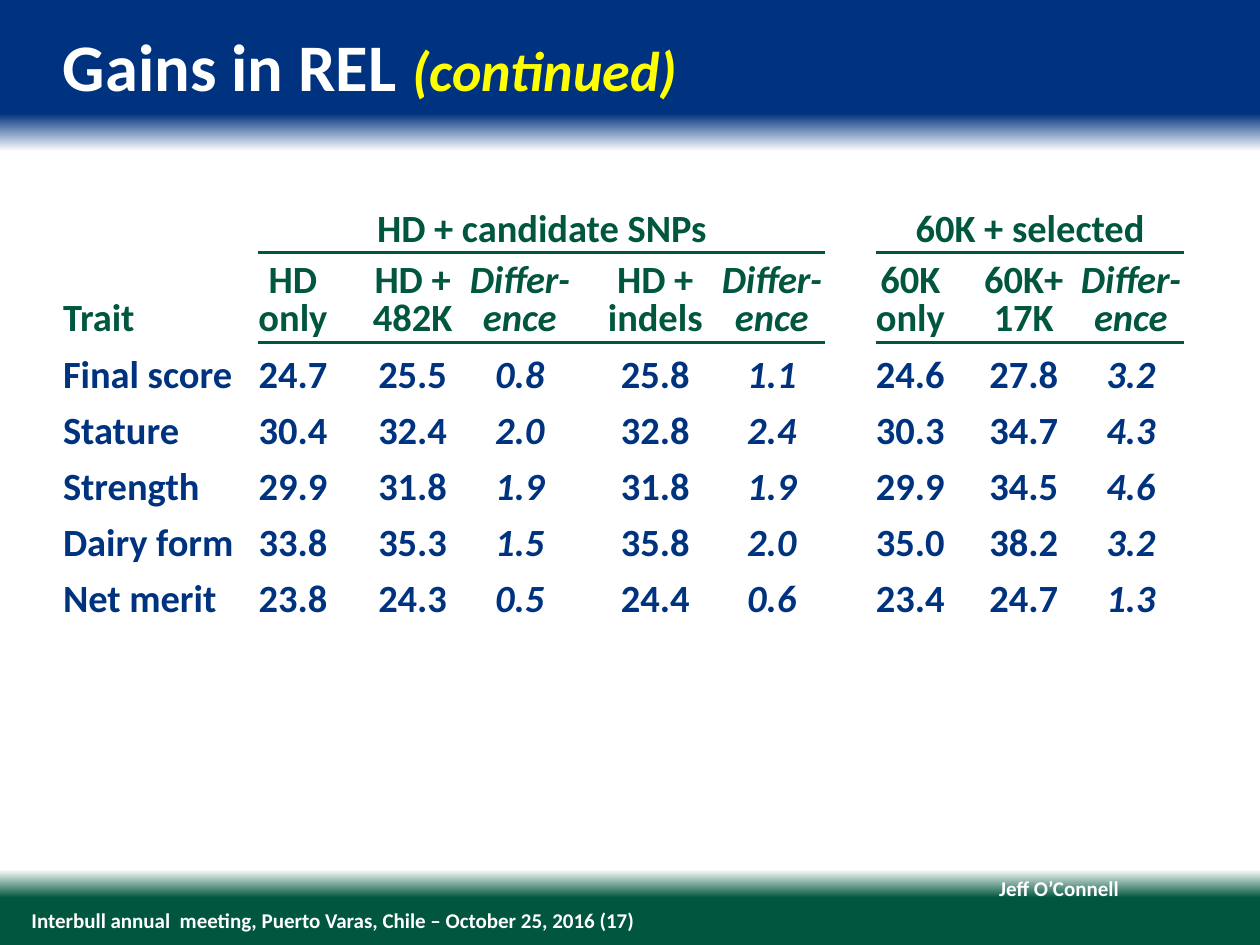
import pptx
import pptx.util
from pptx.dml.color import RGBColor
from pptx.enum.text import MSO_ANCHOR, MSO_AUTO_SIZE, PP_ALIGN
from pptx.oxml import parse_xml
from pptx.oxml.ns import nsdecls, qn
from pptx.util import Inches, Pt

NAVY = RGBColor(0x00, 0x33, 0x7F)
GREEN = RGBColor(0x00, 0x56, 0x3F)
WHITE = RGBColor(0xFF, 0xFF, 0xFF)
YELLOW = RGBColor(0xFF, 0xFF, 0x00)

BACKGROUND_STOPS = [(0, NAVY), (12, NAVY), (16, WHITE), (92, WHITE), (95, GREEN), (100, GREEN)]
NO_STYLE = "{2D5ABB26-0587-4C30-8999-92F81FD0307C}"

COL_WIDTHS = [1.55, 0.55, 0.35, 0.65, 0.1, 0.85, 0.25, 0.8, 0.1, 0.85,
              0.4, 0.55, 0.3, 0.65, 0.1, 0.85]
VALUE_COLS = [1, 3, 5, 7, 9, 11, 13, 15]
DIFFERENCE_COLS = {5, 9, 15}
GROUPS = [("HD + candidate SNPs", 1, 9), ("60K + selected", 11, 15)]
HEADINGS = ["HD only", "HD + 482K", "Differ-ence", "HD + indels", "Differ-ence",
            "60K only", "60K+\n17K", "Differ-ence"]
TRAITS = [
    ("Final score", "24.7", "25.5", "0.8", "25.8", "1.1", "24.6", "27.8", "3.2"),
    ("Stature", "30.4", "32.4", "2.0", "32.8", "2.4", "30.3", "34.7", "4.3"),
    ("Strength", "29.9", "31.8", "1.9", "31.8", "1.9", "29.9", "34.5", "4.6"),
    ("Dairy form", "33.8", "35.3", "1.5", "35.8", "2.0", "35.0", "38.2", "3.2"),
    ("Net merit", "23.8", "24.3", "0.5", "24.4", "0.6", "23.4", "24.7", "1.3"),
]


def set_attrs(obj, **values):
    for name, value in values.items():
        setattr(obj, name, value)


def paint_background(s):
    s.background.fill.gradient()
    grad = s.element.find(".//" + qn("a:gradFill"))
    for child in list(grad):
        grad.remove(child)
    stops = "".join(
        f'<a:gs pos="{pos * 1000}"><a:srgbClr val="{color}"/></a:gs>'
        for pos, color in BACKGROUND_STOPS)
    grad.append(parse_xml(f'<a:gsLst {nsdecls("a")}>{stops}</a:gsLst>'))
    grad.append(parse_xml(f'<a:lin {nsdecls("a")} ang="5400000" scaled="0"/>'))


def add_text(s, box, runs, anchor=MSO_ANCHOR.MIDDLE, align=PP_ALIGN.LEFT, wrap=True):
    """Add one line of text; runs holds (text, font values) pairs."""
    tf = s.shapes.add_textbox(*map(Inches, box)).text_frame
    set_attrs(tf, margin_left=0, margin_top=0, margin_right=0, margin_bottom=0,
              word_wrap=wrap, vertical_anchor=anchor, auto_size=MSO_AUTO_SIZE.SHAPE_TO_FIT_TEXT)
    p = tf.paragraphs[0]
    p.alignment = align
    for text, (size, color, italic) in runs:
        r = p.add_run()
        r.text = text
        set_attrs(r.font, name="Calibri", size=Pt(size), bold=True, italic=italic)
        r.font.color.rgb = color


def add_title(s, box):
    add_text(s, box, [("Gains in REL ", (38, WHITE, False)),
                      ("(continued)", (32, YELLOW, True))], anchor=MSO_ANCHOR.TOP)


def add_footer(s, author_box, meeting_box):
    style = (12, WHITE, False)
    add_text(s, author_box, [("Jeff O’Connell", style)], align=PP_ALIGN.RIGHT, wrap=False)
    add_text(s, meeting_box, [
        ("Interbull annual  meeting, Puerto Varas, Chile – October 25, 2016 (17)", style)])


def fill_cell(cell, text, color, spacing=32, italic=False, align=PP_ALIGN.CENTER):
    cell.text_frame.text = text
    for p in cell.text_frame.paragraphs:
        set_attrs(p, alignment=align, line_spacing=Pt(spacing))
        for r in p.runs:
            set_attrs(r.font, name="Calibri", size=Pt(22), bold=True, italic=italic)
            r.font.color.rgb = color


def add_rule(cell, side):
    cell._tc.get_or_add_tcPr().insert(0, parse_xml(
        f'<a:{side} {nsdecls("a")} w="{Pt(2.25)}"><a:solidFill>'
        f'<a:srgbClr val="{GREEN}"/></a:solidFill></a:{side}>'))


def add_gains_table(s, box):
    n_rows = len(TRAITS) + 2
    table = s.shapes.add_table(n_rows, len(COL_WIDTHS), *map(Inches, box)).table
    set_attrs(table, first_row=False, horz_banding=False)
    table._tbl.tblPr.find(qn("a:tableStyleId")).text = NO_STYLE
    for col, width in zip(table.columns, COL_WIDTHS):
        col.width = Inches(width)
    for i, row in enumerate(table.rows):
        row.height = Inches(0.71) if i == 1 else Pt(32)
    for cell in table.iter_cells():
        set_attrs(cell, margin_left=0, margin_top=0, margin_right=0, margin_bottom=0,
                  vertical_anchor=MSO_ANCHOR.MIDDLE)
        cell.fill.background()

    trait = table.cell(0, 0)
    trait.merge(table.cell(1, 0))
    trait.vertical_anchor = MSO_ANCHOR.BOTTOM
    fill_cell(trait, "Trait", GREEN, spacing=22, align=PP_ALIGN.LEFT)
    for text, first, last in GROUPS:
        group = table.cell(0, first)
        group.merge(table.cell(0, last))
        group.vertical_anchor = MSO_ANCHOR.BOTTOM
        fill_cell(group, text, GREEN)
        for c in range(first, last + 1):
            add_rule(table.cell(0, c), "lnB")
            add_rule(table.cell(1, c), "lnT")

    for c, text in zip(VALUE_COLS, HEADINGS):
        cell = table.cell(1, c)
        cell.margin_top = Inches(0.1)
        fill_cell(cell, text, GREEN, spacing=22, italic=c in DIFFERENCE_COLS)
    for i, (name, *values) in enumerate(TRAITS, start=2):
        fill_cell(table.cell(i, 0), name, NAVY, align=PP_ALIGN.LEFT)
        for c, value in zip(VALUE_COLS, values):
            fill_cell(table.cell(i, c), value, NAVY, italic=c in DIFFERENCE_COLS)


def main():
    prs = pptx.Presentation()
    set_attrs(prs, slide_width=Inches(10), slide_height=Inches(7.5))
    s = prs.slides.add_slide(prs.slide_layouts[6])
    paint_background(s)
    add_footer(s, (7.91, 6.95, 0.97, 0.2), (0.25, 7.2, 5.93, 0.2))
    add_title(s, (0.5, 0.2, 9, 0.64))
    add_gains_table(s, (0.5, 1.56, 8.9, 3.38))
    prs.save("out.pptx")


if __name__ == "__main__":
    main()
